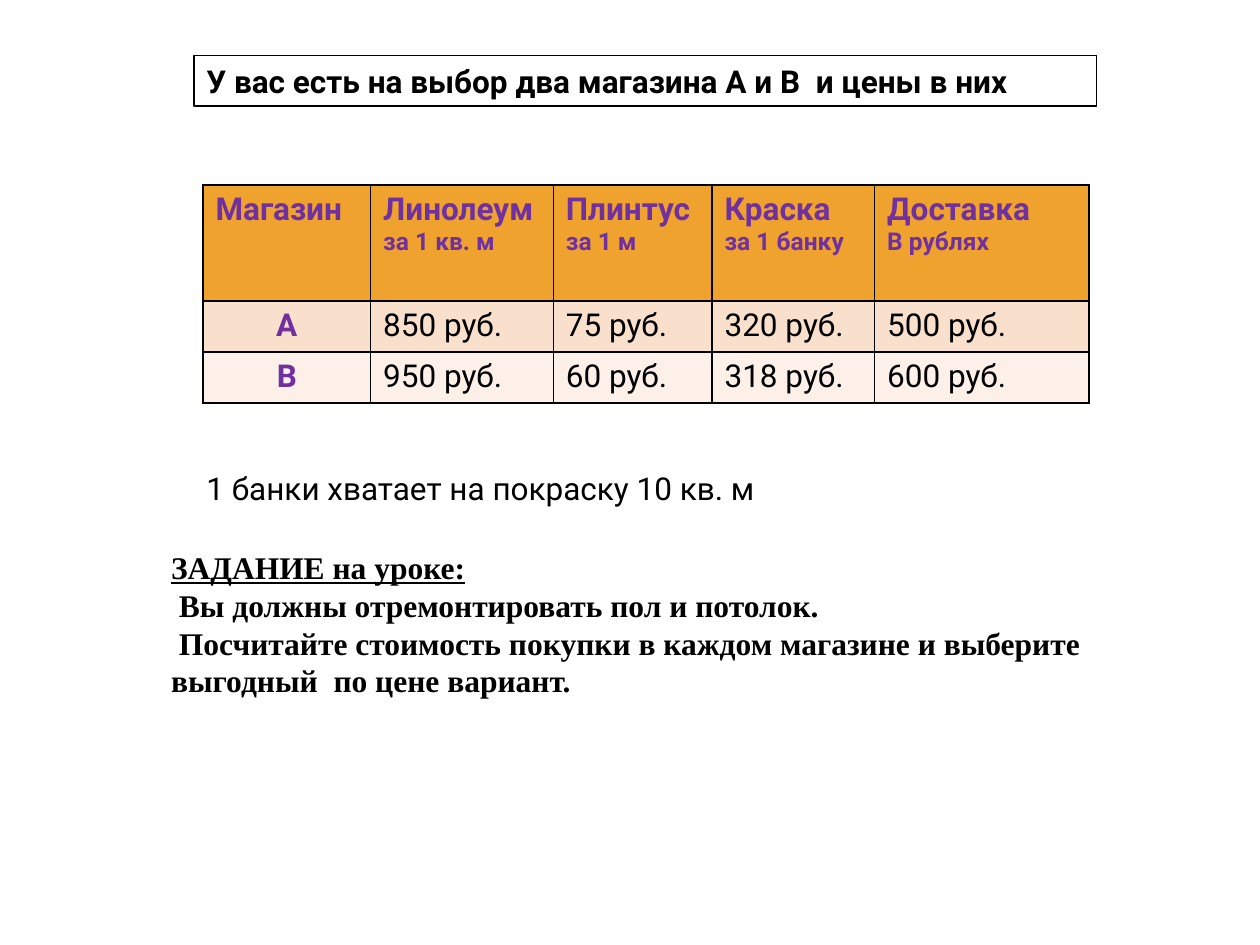
from dataclasses import dataclass

from lxml import etree
from pptx import Presentation
from pptx import util as u
from pptx.dml import color
from pptx.enum import text
from pptx.oxml import ns


@dataclass(frozen=True)
class Theme:
    sans: str = "Roboto"
    serif: str = "Times New Roman"
    body: int = 18
    small: int = 14
    ink: str = "000000"
    accent: str = "7030A0"
    header: str = "F0A22E"
    bands: tuple = ("F9E0CD", "FCF0E8")
    frame: float = 0.75
    grid: float = 1


class SlideBuilder:
    def __init__(self, slide, theme):
        self.slide = slide
        self.theme = theme

    def add_lines(self, frame, lines, align=text.PP_ALIGN.LEFT):
        for index, (content, style) in enumerate(lines):
            paragraph = frame.paragraphs[0] if index == 0 else frame.add_paragraph()
            paragraph.alignment = align
            run = paragraph.add_run()
            run.text = content
            values = {"name": self.theme.sans, "size": self.theme.body,
                      "bold": False, "color": self.theme.ink, **style}
            run.font.color.rgb = color.RGBColor.from_string(values.pop("color"))
            values["size"] = u.Pt(values["size"])
            for name, value in values.items():
                setattr(run.font, name, value)

    def text_box(self, box, lines, framed=False):
        shape = self.slide.shapes.add_textbox(*map(u.Pt, box))
        frame_format = {"word_wrap": True,
                        "auto_size": text.MSO_AUTO_SIZE.SHAPE_TO_FIT_TEXT}
        for name, value in frame_format.items():
            setattr(shape.text_frame, name, value)
        if framed:
            shape.line.color.rgb = color.RGBColor.from_string(self.theme.ink)
            shape.line.width = u.Pt(self.theme.frame)
        self.add_lines(shape.text_frame, lines)

    def borders(self, cell):
        properties = cell._tc.get_or_add_tcPr()
        for side in ("a:lnL", "a:lnR", "a:lnT", "a:lnB"):
            line = etree.SubElement(properties, ns.qn(side),
                                    w=str(u.Pt(self.theme.grid)))
            fill = etree.SubElement(line, ns.qn("a:solidFill"))
            etree.SubElement(fill, ns.qn("a:srgbClr"), val=self.theme.ink)

    def cell(self, cell, lines, fill, align=text.PP_ALIGN.LEFT):
        self.borders(cell)
        cell.fill.solid()
        cell.fill.fore_color.rgb = color.RGBColor.from_string(fill)
        self.add_lines(cell.text_frame, lines, align)

    def price_table(self, left, top, widths, heights, headings, shops):
        theme = self.theme
        table = self.slide.shapes.add_table(
            len(heights), len(widths), u.Pt(left), u.Pt(top),
            u.Pt(sum(widths)), u.Pt(sum(heights))).table
        for column, width in zip(table.columns, widths):
            column.width = u.Pt(width)
        for row, height in zip(table.rows, heights):
            row.height = u.Pt(height)
        strong = {"bold": True, "color": theme.accent}
        for column, (title, *units) in enumerate(headings):
            lines = [(title, strong)]
            lines += [(unit, {**strong, "size": theme.small}) for unit in units]
            self.cell(table.cell(0, column), lines, theme.header)
        for row, ((shop, *prices), fill) in enumerate(zip(shops, theme.bands), 1):
            self.cell(table.cell(row, 0), [(shop, strong)], fill,
                      text.PP_ALIGN.CENTER)
            for column, price in enumerate(prices, 1):
                self.cell(table.cell(row, column), [(f"{price} руб.", {})], fill)


def main():
    presentation = Presentation()
    presentation.slide_width = u.Pt(720)
    presentation.slide_height = u.Pt(540)
    theme = Theme()
    slide = presentation.slides.add_slide(presentation.slide_layouts[6])
    builder = SlideBuilder(slide, theme)

    builder.price_table(
        116, 105.6, (95.8, 104.4, 90.7, 92.9, 122.4), (66.4, 29.2, 29.2),
        (("Магазин",), ("Линолеум", "за 1 кв. м"), ("Плинтус", "за 1 м"),
         ("Краска", "за 1 банку"), ("Доставка", "В рублях")),
        (("А", 850, 75, 320, 500), ("В", 950, 60, 318, 600)))

    builder.text_box(
        (110.8, 31.6, 516, 29),
        [("У вас есть на выбор два магазина А и В  и цены в них", {"bold": True})],
        framed=True)
    builder.text_box((110.8, 264.4, 505, 29),
                     [("1 банки хватает на покраску 10 кв. м", {})])

    task = {"name": theme.serif, "bold": True}
    builder.text_box(
        (90.7, 309.6, 556, 138),
        [("ЗАДАНИЕ на уроке:", {**task, "underline": True}),
         (" Вы должны отремонтировать пол и потолок.", task),
         (" Посчитайте стоимость покупки в каждом магазине и выберите "
          "выгодный  по цене вариант.", task)])

    presentation.save("out.pptx")


if __name__ == "__main__":
    main()
